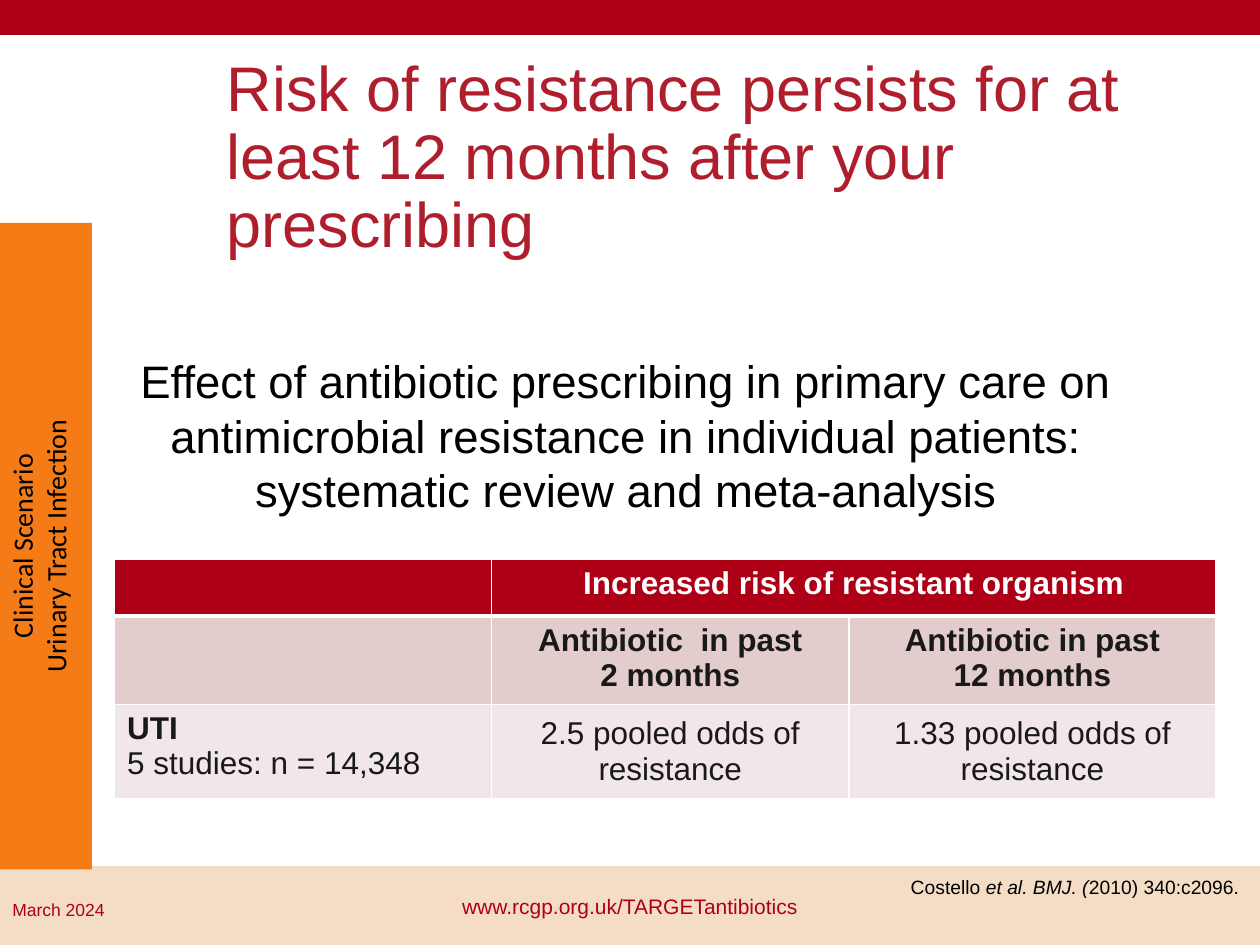
from lxml.etree import SubElement
from pptx import Presentation
from pptx.dml.color import RGBColor
from pptx.enum.shapes import MSO_SHAPE
from pptx.enum.text import MSO_ANCHOR, MSO_AUTO_SIZE, PP_ALIGN
from pptx.oxml import parse_xml
from pptx.oxml.ns import nsdecls, qn
from pptx.util import Inches, Pt

SLIDE_WIDTH = Inches(10)
SLIDE_HEIGHT = Inches(7.5)

CRIMSON = RGBColor(0xAD, 0x00, 0x16)
TITLE_RED = RGBColor(0xAF, 0x1E, 0x2C)
SAND = RGBColor(0xF4, 0xDD, 0xC4)
ORANGE = RGBColor(0xF5, 0x7B, 0x17)
ROSE = RGBColor(0xE3, 0xCC, 0xCC)
PALE_ROSE = RGBColor(0xF1, 0xE7, 0xE8)
BLACK = RGBColor(0x00, 0x00, 0x00)
CHARCOAL = RGBColor(0x19, 0x19, 0x19)
WHITE = RGBColor(0xFF, 0xFF, 0xFF)

ROW_FILLS = [CRIMSON, ROSE, PALE_ROSE]
COLUMN_SHARES = [29.9, 28.4, 29.1]
ROW_SHARES = [6, 8.9, 10]


def across(percent):
    return int(SLIDE_WIDTH * percent / 100)


def down(percent):
    return int(SLIDE_HEIGHT * percent / 100)


def area(left, top, width, height):
    return across(left), down(top), across(width), down(height)


def write_text(text_frame, text, size, color, font="Arial", align=PP_ALIGN.LEFT, bold=False):
    text_frame.word_wrap = True
    text_frame.text = text
    for paragraph in text_frame.paragraphs:
        paragraph.alignment = align
        for run in paragraph.runs:
            run.font.name = font
            run.font.size = Pt(size)
            run.font.bold = bold
            run.font.color.rgb = color


def add_band(slide, place, fill, outlined=False):
    shape = slide.shapes.add_shape(MSO_SHAPE.RECTANGLE, *area(*place))
    shape.shadow.inherit = False
    shape.fill.solid()
    shape.fill.fore_color.rgb = fill
    if outlined:
        shape.line.color.rgb = fill
        shape.line.width = Pt(1)
    else:
        shape.line.fill.background()
    shape.text_frame.vertical_anchor = MSO_ANCHOR.TOP
    return shape


def add_label(slide, place, text, size, color, align=PP_ALIGN.LEFT):
    box = slide.shapes.add_textbox(*area(*place))
    write_text(box.text_frame, text, size, color, align=align)
    return box.text_frame


def add_title(slide):
    title = slide.shapes.title
    title.left, title.top, title.width, title.height = area(17, 7.2, 80.5, 19.3)
    text_frame = title.text_frame
    write_text(text_frame, "Risk of resistance persists for at least 12 months after your prescribing",
               36, TITLE_RED)
    text_frame.auto_size = MSO_AUTO_SIZE.NONE
    text_frame.vertical_anchor = MSO_ANCHOR.MIDDLE
    text_frame.paragraphs[0].line_spacing = 0.9


def add_side_tab(slide):
    tab = add_band(slide, (-0.1, 23.6, 7.4, 68.4), ORANGE)
    write_text(tab.text_frame, "Clinical Scenario\nUrinary Tract Infection", 16, BLACK,
               font="Calibri", align=PP_ALIGN.CENTER)
    tab.text_frame._txBody.bodyPr.set("vert", "vert270")


def add_citation(slide):
    text_frame = add_label(slide, (71.3, 92, 28.7, 6.3), "Costello ", 11, BLACK)
    paragraph = text_frame.paragraphs[0]
    for text, italic in [("et al. BMJ. (", True), ("2010) 340:c2096.", False)]:
        run = paragraph.add_run()
        run.text = text
        run.font.name = "Arial"
        run.font.size = Pt(11)
        run.font.italic = italic
        run.font.color.rgb = BLACK


def set_borders(cell, top, bottom):
    properties = cell._tc.get_or_add_tcPr()
    widths = {"lnL": 1, "lnR": 1, "lnT": top, "lnB": bottom}
    for position, (tag, width) in enumerate(widths.items()):
        border = parse_xml(f'<a:{tag} {nsdecls("a")} w="{Pt(width)}"/>')
        fill = SubElement(border, qn("a:solidFill"))
        SubElement(fill, qn("a:srgbClr")).set("val", str(WHITE))
        properties.insert(position, border)


def add_risk_table(slide):
    place = area(9.1, 59.2, sum(COLUMN_SHARES), sum(ROW_SHARES))
    table = slide.shapes.add_table(len(ROW_SHARES), len(COLUMN_SHARES), *place).table
    for column, share in zip(table.columns, COLUMN_SHARES):
        column.width = across(share)
    for row, share in zip(table.rows, ROW_SHARES):
        row.height = down(share)
    table.cell(0, 1).merge(table.cell(0, 2))

    contents = [
        ["", "Increased risk of resistant organism", ""],
        ["", "Antibiotic  in past\n2 months", "Antibiotic in past\n12 months"],
        ["UTI\n5 studies: n = 14,348", "2.5 pooled odds of resistance", "1.33 pooled odds of resistance"],
    ]
    for row_index, texts in enumerate(contents):
        for column_index, text in enumerate(texts):
            cell = table.cell(row_index, column_index)
            set_borders(cell, 3 if row_index == 1 else 1, 3 if row_index == 0 else 1)
            cell.fill.solid()
            cell.fill.fore_color.rgb = ROW_FILLS[row_index]
            if text:
                write_text(cell.text_frame, text, 18,
                           WHITE if row_index == 0 else CHARCOAL,
                           align=PP_ALIGN.CENTER if column_index else PP_ALIGN.LEFT,
                           bold=row_index < 2)
            if row_index == 2 and column_index:
                cell.vertical_anchor = MSO_ANCHOR.MIDDLE
    table.cell(2, 0).text_frame.paragraphs[0].runs[0].font.bold = True


def main():
    presentation = Presentation()
    presentation.slide_width = SLIDE_WIDTH
    presentation.slide_height = SLIDE_HEIGHT
    slide = presentation.slides.add_slide(presentation.slide_layouts[5])

    add_band(slide, (0, 91.7, 100, 8.3), SAND, outlined=True)
    add_band(slide, (0, -0.1, 100, 3.7), CRIMSON, outlined=True)
    date = add_band(slide, (0, 94.5, 17.4, 5.3), SAND)
    write_text(date.text_frame, "March 2024", 10, CRIMSON)
    add_title(slide)
    add_side_tab(slide)
    add_label(slide, (7.3, 36.7, 84.8, 18.8),
              "Effect of antibiotic prescribing in primary care on antimicrobial resistance "
              "in individual patients: systematic review and meta-analysis",
              26, BLACK, PP_ALIGN.CENTER)
    add_risk_table(slide)
    add_label(slide, (33.3, 93.9, 33.4, 4), "www.rcgp.org.uk/TARGETantibiotics",
              12, CRIMSON, PP_ALIGN.CENTER)
    add_citation(slide)
    presentation.save("out.pptx")


if __name__ == "__main__":
    main()
